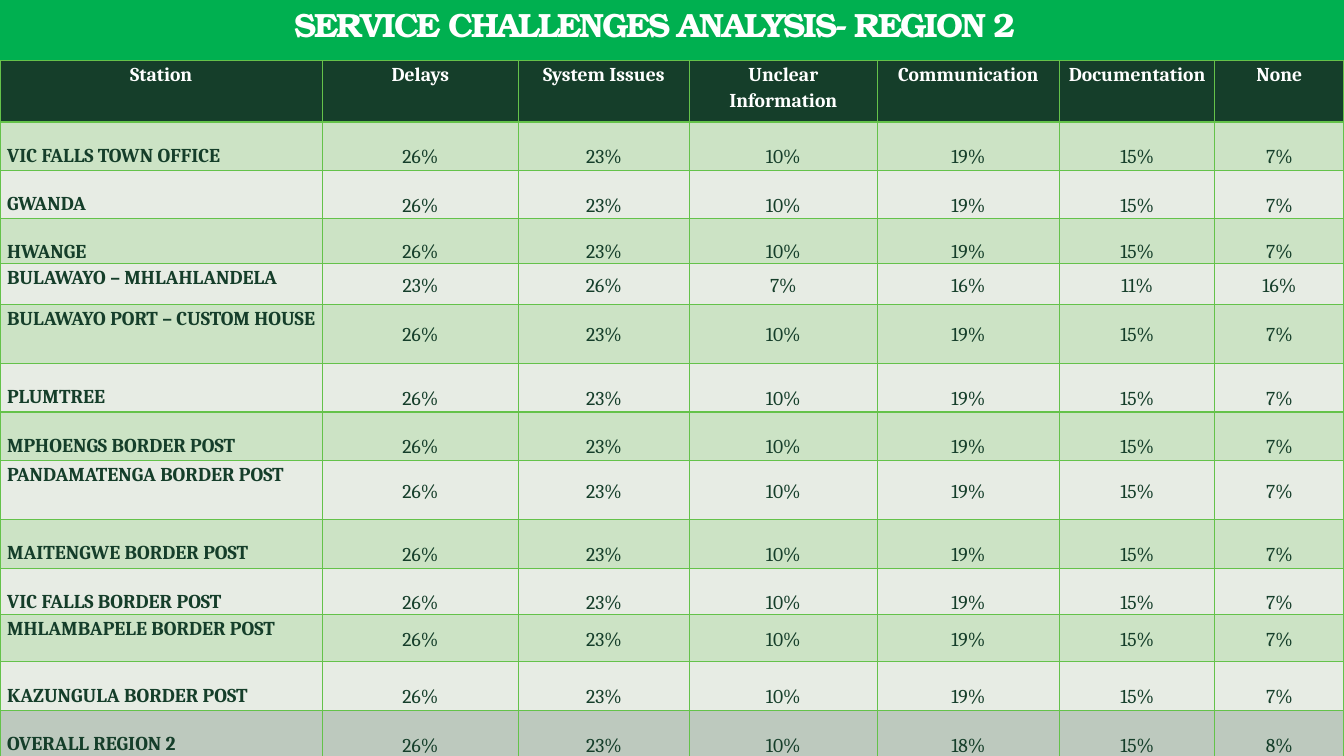
from lxml import etree
from pptx import Presentation
from pptx import util as u
from pptx.dml.color import RGBColor
from pptx.enum import shapes, text
from pptx.oxml.ns import qn

THEME = {
    "title_bar": "00B050", "page": "E7ECE4", "dark": "153E2A",
    "accent": "64C24A", "white": "FFFFFF", "shadow": "000000",
    "title_font": "TeX Gyre Bonum", "table_font": "Cambria",
    "title_size": 24, "table_size": 14, "tint": 20,
}
SLIDE_W, SLIDE_H = 13.33, 7.5
BAR_H = 0.08 * SLIDE_H
COL_WIDTHS = [3.2, 1.94, 1.7, 1.86, 1.81, 1.54, 1.28]
HEADER_H = 0.61
HEADINGS = ["Station", "Delays", "System Issues", "Unclear Information",
            "Communication", "Documentation", "None"]
USUAL = [26, 23, 10, 19, 15, 7]
DOUBLE, TIGHT = 2.0, 1.15
# station, row height, line spacing, percentages
STATIONS = [
    ("VIC FALLS TOWN OFFICE", 0.48, DOUBLE, USUAL),
    ("GWANDA", 0.48, DOUBLE, USUAL),
    ("HWANGE", 0.4, DOUBLE, USUAL),
    ("BULAWAYO – MHLAHLANDELA", 0.4, TIGHT, [23, 26, 7, 16, 11, 16]),
    ("BULAWAYO PORT – CUSTOM HOUSE", 0.59, TIGHT, USUAL),
    ("PLUMTREE", 0.48, DOUBLE, USUAL),
    ("MPHOENGS BORDER POST", 0.48, DOUBLE, USUAL),
    ("PANDAMATENGA BORDER POST", 0.59, TIGHT, USUAL),
    ("MAITENGWE BORDER POST", 0.48, DOUBLE, USUAL),
    ("VIC FALLS BORDER POST", 0.46, DOUBLE, USUAL),
    ("MHLAMBAPELE BORDER POST", 0.47, TIGHT, USUAL),
    ("KAZUNGULA BORDER POST", 0.48, DOUBLE, USUAL),
    ("OVERALL REGION 2", 0.48, DOUBLE, [26, 23, 10, 18, 15, 8]),
]


def write(tf, words, align, spacing, color, **font):
    p = tf.paragraphs[0]
    p.alignment, p.line_spacing = align, spacing
    r = p.add_run()
    r.text = words
    r.font.color.rgb = RGBColor.from_string(color)
    for name, value in font.items():
        setattr(r.font, name, value)
    return r


def add_color(parent, color, percent):
    """Append a colour with the given opacity to an XML element."""
    clr = etree.SubElement(parent, qn("a:srgbClr"), val=color)
    if percent < 100:
        etree.SubElement(clr, qn("a:alpha"), val=str(percent * 1000))


prs = Presentation()
prs.slide_width, prs.slide_height = u.Inches(SLIDE_W), u.Inches(SLIDE_H)
s = prs.slides.add_slide(prs.slide_layouts[6])
s.background.fill.solid()
s.background.fill.fore_color.rgb = RGBColor.from_string(THEME["page"])

# Title bar
bar = s.shapes.add_shape(shapes.MSO_SHAPE.RECTANGLE, 0, 0,
                         prs.slide_width, u.Inches(BAR_H))
bar.fill.solid()
bar.fill.fore_color.rgb = RGBColor.from_string(THEME["title_bar"])
bar.line.fill.background()
bar.shadow.inherit = False
effects = bar._element.spPr.find(qn("a:effectLst"))
shadow = etree.SubElement(effects, qn("a:outerShdw"),
                          blurRad=str(u.Pt(11.8)), dist=str(u.Pt(19.7)),
                          dir=str(141 * 60000), algn="t", rotWithShape="0")
add_color(shadow, THEME["shadow"], 28)
tf = bar.text_frame
bar_format = {"word_wrap": True, "vertical_anchor": text.MSO_ANCHOR.BOTTOM,
              "margin_left": u.Inches(0.31), "margin_right": u.Inches(0.65),
              "margin_top": 0, "margin_bottom": u.Inches(0.16)}
for name, value in bar_format.items():
    setattr(tf, name, value)
r = write(tf, "SERVICE CHALLENGES ANALYSIS- REGION 2", text.PP_ALIGN.CENTER,
          0.9, THEME["white"], name=THEME["title_font"],
          size=u.Pt(THEME["title_size"]), bold=True)
r._r.get_or_add_rPr().set("spc", "-150")

# Table
heights = [HEADER_H] + [height for _, height, _, _ in STATIONS]
rows = [HEADINGS] + [[station] + [f"{v}%" for v in values]
                     for station, _, _, values in STATIONS]
spacings = [TIGHT] + [spacing for _, _, spacing, _ in STATIONS]
frame = s.shapes.add_table(len(rows), len(COL_WIDTHS), 0, u.Inches(BAR_H),
                           prs.slide_width, u.Inches(sum(heights)))
table = frame.table
table.horz_banding = False
for column, width in zip(table.columns, COL_WIDTHS):
    column.width = u.Inches(width)
for row, height in zip(table.rows, heights):
    row.height = u.Inches(height)

for i, words in enumerate(rows):
    header, total = i == 0, i == len(rows) - 1
    for j, word in enumerate(words):
        cell = table.cell(i, j)
        label = header or j == 0
        cell_format = {
            "margin_left": u.Inches(0.07), "margin_right": u.Inches(0.07),
            "margin_top": 0, "margin_bottom": 0,
            "vertical_anchor": (text.MSO_ANCHOR.TOP if label
                                else text.MSO_ANCHOR.MIDDLE)}
        for name, value in cell_format.items():
            setattr(cell, name, value)
        write(cell.text_frame, word,
              text.PP_ALIGN.CENTER if header or j else text.PP_ALIGN.LEFT,
              spacings[i], THEME["white" if header else "dark"],
              name=THEME["table_font"], size=u.Pt(THEME["table_size"]),
              bold=label)
        tcPr = cell._tc.get_or_add_tcPr()
        for side in "LRTB":
            heavy = (header and side == "B") or (i == 1 and side == "T")
            ln = etree.SubElement(tcPr, qn(f"a:ln{side}"),
                                  w=str(u.Pt(2 if heavy else 1)))
            add_color(etree.SubElement(ln, qn("a:solidFill")),
                      THEME["accent"], 100)
        if header or total or i % 2:
            fill = etree.SubElement(tcPr, qn("a:solidFill"))
            add_color(fill, THEME["dark" if header or total else "accent"],
                      100 if header else THEME["tint"])
        else:
            etree.SubElement(tcPr, qn("a:noFill"))

prs.save("out.pptx")
